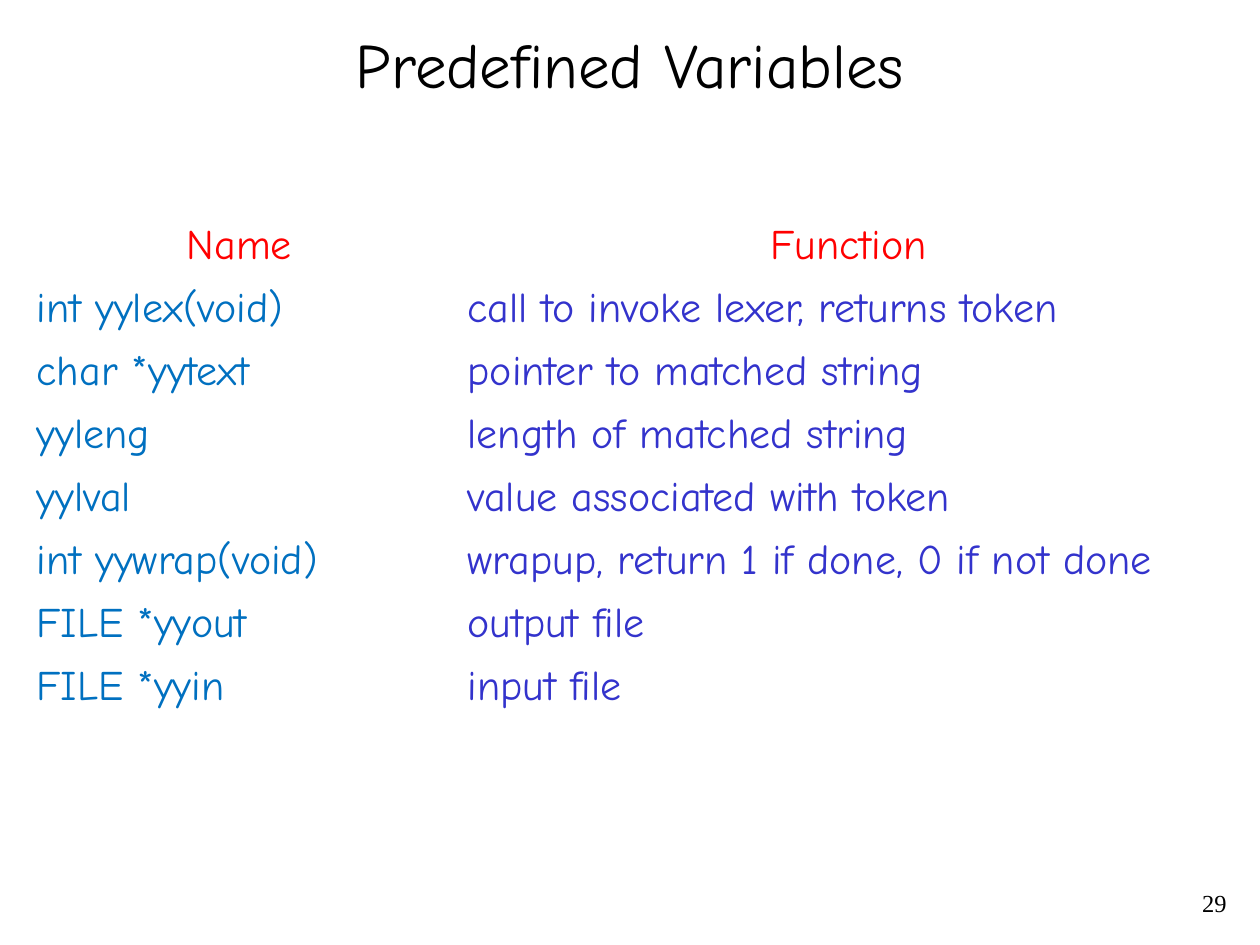
from pptx import Presentation
from pptx import util as u
from pptx.dml.color import RGBColor
from pptx.enum import text

EMU_PER_PX = 914400 / 126
BODY_FONT = "Comic Neue"
NUMBER_FONT = "Times New Roman"
BLACK, RED, BLUE, INDIGO = "000000", "FF0000", "0070C0", "3333CC"
LEFT, CENTER, RIGHT = text.PP_ALIGN.LEFT, text.PP_ALIGN.CENTER, text.PP_ALIGN.RIGHT
TOP, MIDDLE = text.MSO_ANCHOR.TOP, text.MSO_ANCHOR.MIDDLE

HEADINGS = ("Name", "Function")
VARIABLES = [
    ("int yylex(void)", "call to invoke lexer, returns token"),
    ("char *yytext", "pointer to matched string"),
    ("yyleng", "length of matched string"),
    ("yylval", "value associated with token"),
    ("int yywrap(void)", "wrapup, return 1 if done, 0 if not done"),
    ("FILE *yyout", "output file"),
    ("FILE *yyin", "input file"),
]


def px(length):
    return u.Emu(round(length * EMU_PER_PX))


def color(hex_string):
    return RGBColor.from_string(hex_string)


class SlideBuilder:
    def __init__(self, slide):
        self.slide = slide

    def set_text(self, text_frame, words, size, font, fill, align):
        text_frame.text = words
        paragraph = text_frame.paragraphs[0]
        paragraph.alignment = align
        for run in paragraph.runs:
            run.font.size = u.Pt(size)
            run.font.name = font
            run.font.color.rgb = color(fill)

    def text_box(self, box, words, size, font, align, anchor):
        shape = self.slide.shapes.add_textbox(*map(px, box))
        shape.text_frame.word_wrap = True
        shape.text_frame.vertical_anchor = anchor
        self.set_text(shape.text_frame, words, size, font, BLACK, align)

    def table(self, left, top, widths, row_height, rows, column_colors):
        shape = self.slide.shapes.add_table(
            len(rows), len(widths), px(left), px(top),
            px(sum(widths)), px(row_height * len(rows)))
        table = shape.table
        table.first_row = table.horz_banding = False
        for column, width in zip(table.columns, widths):
            column.width = px(width)
        for row_index, row in enumerate(rows):
            table.rows[row_index].height = px(row_height)
            for column_index, words in enumerate(row):
                cell = table.cell(row_index, column_index)
                cell.fill.background()
                cell.vertical_anchor = MIDDLE
                heading = row_index == 0
                self.set_text(cell.text_frame, words, 24, BODY_FONT,
                              RED if heading else column_colors[column_index],
                              CENTER if heading else LEFT)


def main():
    presentation = Presentation()
    presentation.slide_width, presentation.slide_height = px(1260), px(945)
    builder = SlideBuilder(presentation.slides.add_slide(presentation.slide_layouts[6]))

    # Title
    builder.text_box((21, 21, 1218, 84), "Predefined Variables", 36, BODY_FONT, CENTER, MIDDLE)

    # Variables and what they do
    builder.table(24, 214, (431, 787), 61, [HEADINGS, *VARIABLES], (BLUE, INDIGO))

    # Slide number
    builder.text_box((977, 882, 262, 42), "29", 14, NUMBER_FONT, RIGHT, TOP)

    presentation.save("out.pptx")


if __name__ == "__main__":
    main()
